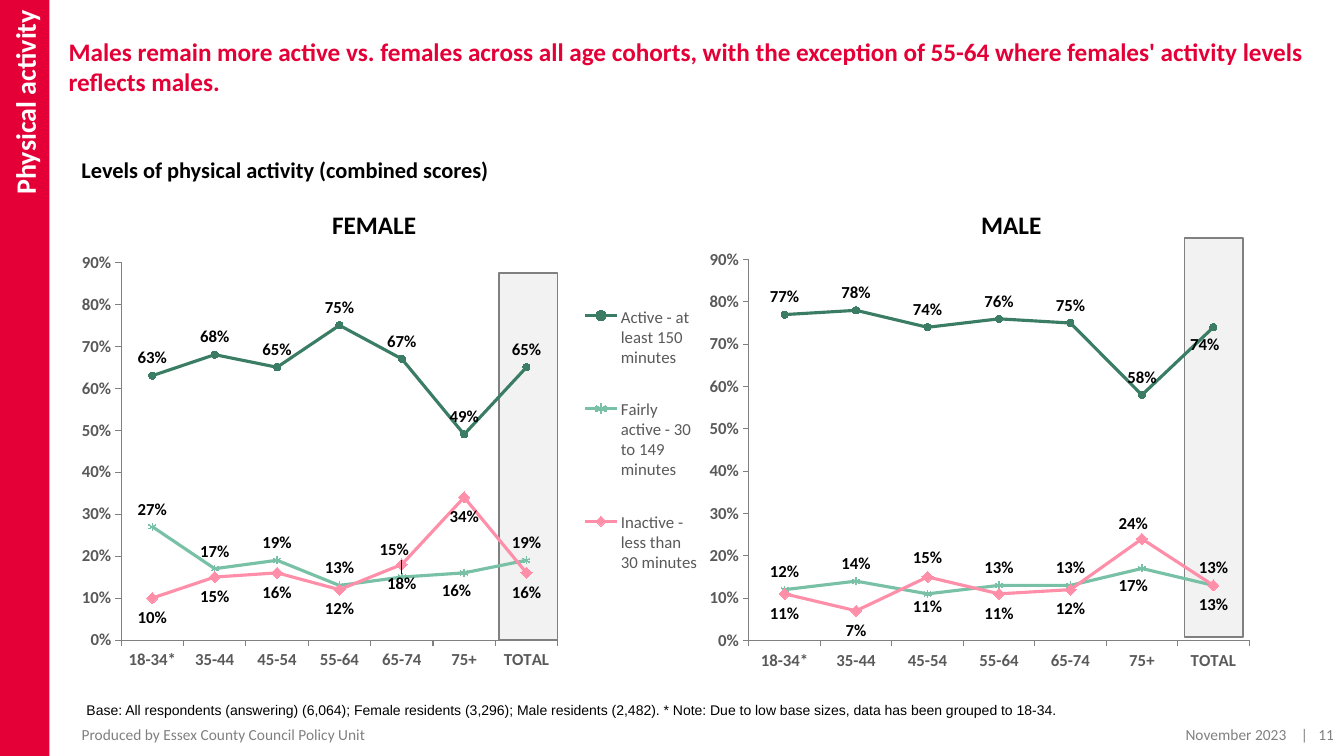
from lxml import etree
from pptx import Presentation
from pptx.chart.data import CategoryChartData
from pptx.dml.color import RGBColor
from pptx.enum.chart import (XL_CHART_TYPE, XL_LABEL_POSITION, XL_LEGEND_POSITION,
                             XL_MARKER_STYLE, XL_TICK_MARK)
from pptx.enum.shapes import MSO_SHAPE
from pptx.enum.text import MSO_ANCHOR, PP_ALIGN
from pptx.oxml import parse_xml
from pptx.util import Inches, Pt

ABOVE, BELOW = XL_LABEL_POSITION.ABOVE, XL_LABEL_POSITION.BELOW
CIRCLE, STAR, DIAMOND = XL_MARKER_STYLE.CIRCLE, XL_MARKER_STYLE.STAR, XL_MARKER_STYLE.DIAMOND
LINE_MARKERS = XL_CHART_TYPE.LINE_MARKERS
LEGEND_RIGHT = XL_LEGEND_POSITION.RIGHT
TICK_OUTSIDE, TICK_NONE = XL_TICK_MARK.OUTSIDE, XL_TICK_MARK.NONE
RECTANGLE = MSO_SHAPE.RECTANGLE
TOP, MIDDLE = MSO_ANCHOR.TOP, MSO_ANCHOR.MIDDLE
LEFT, CENTER, RIGHT = PP_ALIGN.LEFT, PP_ALIGN.CENTER, PP_ALIGN.RIGHT

RED = RGBColor(0xE4, 0x00, 0x37)
WHITE = RGBColor(0xFF, 0xFF, 0xFF)
BLACK = RGBColor(0x00, 0x00, 0x00)
DARK_GREY = RGBColor(0x59, 0x59, 0x59)
GREY = RGBColor(0x80, 0x80, 0x80)
PALE_GREY = RGBColor(0xF2, 0xF2, 0xF2)
DARK_GREEN = RGBColor(0x3A, 0x7D, 0x64)
LIGHT_GREEN = RGBColor(0x78, 0xC0, 0xA6)
PINK = RGBColor(0xFF, 0x8E, 0xA9)

CHART_NS = "http://schemas.openxmlformats.org/drawingml/2006/chart"
DRAWING_NS = "http://schemas.openxmlformats.org/drawingml/2006/main"
AGE_GROUPS = ["18-34*", "35-44", "45-54", "55-64", "65-74", "75+", "TOTAL"]
ACTIVITY_LEVELS = [
    ("Active - at least 150 minutes", DARK_GREEN, CIRCLE, 5, ABOVE),
    ("Fairly active - 30 to 149 minutes", LIGHT_GREEN, STAR, 5, ABOVE),
    ("Inactive - less than 30 minutes", PINK, DIAMOND, 8, BELOW),
]
PLOT_LAYOUT = {"x": 0.06, "y": 0.054, "w": 0.575, "h": 0.799}
LEGEND_LAYOUT = {"x": 0.67, "y": 0.08, "w": 0.15, "h": 0.7}

FEMALE_SHARES = [
    [0.63, 0.68, 0.65, 0.75, 0.67, 0.49, 0.65],
    [0.27, 0.17, 0.19, 0.13, 0.15, 0.16, 0.19],
    [0.10, 0.15, 0.16, 0.12, 0.18, 0.34, 0.16],
]
MALE_SHARES = [
    [0.77, 0.78, 0.74, 0.76, 0.75, 0.58, 0.74],
    [0.12, 0.14, 0.11, 0.13, 0.13, 0.17, 0.13],
    [0.11, 0.07, 0.15, 0.11, 0.12, 0.24, 0.13],
]
FEMALE_MOVED_LABELS = [(1, 4, ABOVE, -0.01, -0.02), (1, 5, BELOW, -0.01, 0)]
MALE_MOVED_LABELS = [(0, 6, BELOW, -0.01, 0), (1, 2, BELOW, 0, -0.01),
                     (1, 5, BELOW, -0.01, 0), (2, 2, ABOVE, 0, 0),
                     (2, 5, ABOVE, -0.01, 0.01)]


def write_text(shape, text, size=12, color=BLACK, bold=False, font="Calibri",
               align=LEFT, anchor=TOP, insets=(0.1, 0.05, 0.1, 0.05)):
    """Fill a shape with one formatted paragraph."""
    frame = shape.text_frame
    frame.word_wrap = True
    frame.vertical_anchor = anchor
    (frame.margin_left, frame.margin_top,
     frame.margin_right, frame.margin_bottom) = map(Inches, insets)
    paragraph = frame.paragraphs[0]
    paragraph.alignment = align
    run = paragraph.add_run()
    run.text = text
    style_font(run.font, size, color, bold, font)


def style_font(font, size, color, bold=False, name="Calibri"):
    """Set the typeface, size, colour and weight of a font."""
    font.name, font.size, font.bold = name, Pt(size), bold
    font.color.rgb = color


def add_text(slide, box, text, **text_format):
    """Add a text box at a box given in inches."""
    write_text(slide.shapes.add_textbox(*map(Inches, box)), text, **text_format)


def add_block(slide, box, fill, outline=None):
    """Add a flat rectangle, outlined when a colour is given."""
    block = slide.shapes.add_shape(RECTANGLE, *map(Inches, box))
    block.shadow.inherit = False
    block.fill.solid()
    block.fill.fore_color.rgb = fill
    if outline is None:
        block.line.fill.background()
    else:
        block.line.color.rgb = outline
        block.line.width = Pt(1)
    return block


def manual_layout(fractions, inner=False, edges=False):
    """Build a chart layout element from fractions of the chart."""
    layout = etree.Element(f"{{{CHART_NS}}}layout")
    manual = etree.SubElement(layout, f"{{{CHART_NS}}}manualLayout")
    settings = {"layoutTarget": "inner"} if inner else {}
    if edges:
        settings.update(xMode="edge", yMode="edge")
    settings.update(fractions)
    for name, value in settings.items():
        etree.SubElement(manual, f"{{{CHART_NS}}}{name}", val=str(value))
    return layout


def clear_fill():
    """Build chart shape properties with neither fill nor outline."""
    return parse_xml(f'<c:spPr xmlns:c="{CHART_NS}" xmlns:a="{DRAWING_NS}">'
                     '<a:noFill/><a:ln><a:noFill/></a:ln></c:spPr>')


def place_part(part, layout, index):
    """Replace the layout of a chart part, at the given child index."""
    for old_layout in part.xpath("c:layout"):
        part.remove(old_layout)
    part.insert(index, layout)


def style_axis(axis):
    """Give an axis grey lines, outside ticks and bold labels."""
    axis.has_major_gridlines = False
    axis.major_tick_mark, axis.minor_tick_mark = TICK_OUTSIDE, TICK_NONE
    axis.format.line.color.rgb = GREY
    axis.format.line.width = Pt(0.75)
    style_font(axis.tick_labels.font, 12, DARK_GREY, bold=True)


def style_series(series, color, marker, marker_size, label_position):
    """Format the line, markers and value labels of one activity level."""
    series.smooth = False
    series.format.line.color.rgb = color
    series.format.line.width = Pt(2.25)
    series.marker.style, series.marker.size = marker, marker_size
    series.marker.format.fill.solid()
    series.marker.format.fill.fore_color.rgb = color
    series.marker.format.line.color.rgb = color
    labels = series.data_labels
    labels.show_value = True
    labels.number_format, labels.number_format_is_linked = "0%", False
    labels.position = label_position
    style_font(labels.font, 12, BLACK, bold=True)


def move_label(series, point, position, dx, dy):
    """Shift the value label of one point away from its neighbours."""
    label = series.points[point].data_label
    style_font(label.font, 12, BLACK, bold=True)
    label.position = position
    index = series.data_labels._element.xpath(f"c:dLbl/c:idx[@val='{point}']")[0]
    index.addnext(manual_layout({"x": dx, "y": dy}))


def add_activity_chart(slide, box, total_box, shares, moved_labels, with_legend=False):
    """Draw the activity lines by age over a shaded band for the total."""
    add_block(slide, total_box, PALE_GREY, GREY)
    data = CategoryChartData(number_format="0%")
    data.categories = AGE_GROUPS
    for level, values in zip(ACTIVITY_LEVELS, shares):
        data.add_series(level[0], values)
    chart = slide.shapes.add_chart(LINE_MARKERS, *map(Inches, box), data).chart
    chart.has_title = False
    style_font(chart.font, 10, BLACK)
    style_axis(chart.category_axis)
    share_axis = chart.value_axis
    style_axis(share_axis)
    share_axis.minimum_scale, share_axis.maximum_scale, share_axis.major_unit = 0, 0.9, 0.1
    share_axis.tick_labels.number_format = "0%"
    share_axis.tick_labels.number_format_is_linked = False
    plot = chart.plots[0]
    plot.vary_by_categories = False
    for series, level in zip(plot.series, ACTIVITY_LEVELS):
        style_series(series, *level[1:])
    for level_index, *move in moved_labels:
        move_label(plot.series[level_index], *move)
    chart.has_legend = with_legend
    if with_legend:
        chart.legend.position = LEGEND_RIGHT
        chart.legend.include_in_layout = False
        style_font(chart.legend.font, 12, DARK_GREY)
        place_part(chart.legend._element, manual_layout(LEGEND_LAYOUT, edges=True), 1)
    plot_area = chart._chartSpace.xpath("c:chart/c:plotArea")[0]
    place_part(plot_area, manual_layout(PLOT_LAYOUT, inner=True, edges=True), 0)
    plot_area.append(clear_fill())
    chart._chartSpace.xpath("c:chart")[0].addnext(clear_fill())


def add_section_band(slide, box, section):
    """Add the red side band with its upward-reading section name."""
    band = add_block(slide, box, RED)
    write_text(band, section, size=20, color=WHITE, bold=True, align=RIGHT,
               anchor=MIDDLE, insets=(0.1, 0.1, 0.1, 0.05))
    band.text_frame._txBody.bodyPr.set("vert", "vert270")


def add_headline(slide, box, headline):
    """Place and format the slide title."""
    title = slide.shapes.title
    title.left, title.top, title.width, title.height = map(Inches, box)
    write_text(title, headline, size=18, color=RED, bold=True, insets=(0, 0, 0, 0))


def add_footer(slide, top, height):
    """Add the producer, date and page number along the bottom."""
    footer_format = {"size": 11, "color": GREY, "anchor": MIDDLE}
    add_text(slide, (0.62, top, 6.54, height), "Produced by Essex County Council Policy Unit",
             insets=(0.19, 0, 0.1, 0), **footer_format)
    add_text(slide, (10.51, top, 2.4, height), "November 2023", align=RIGHT,
             insets=(0.1, 0, 0.15, 0), **footer_format)
    add_text(slide, (12.48, top, 0.85, height), "|   11", align=RIGHT,
             insets=(0.1, 0, 0.1, 0), **footer_format)


def main():
    """Build and save the physical activity slide."""
    deck = Presentation()
    deck.slide_width, deck.slide_height = Inches(13.33), Inches(7.5)
    slide = deck.slides.add_slide(deck.slide_layouts[5])
    add_headline(slide, (0.68, 0.36, 12.47, 1.16),
                 "Males remain more active vs. females across all age cohorts, with the exception "
                 "of 55-64 where females' activity levels reflects males.")
    add_activity_chart(slide, (6.91, 2.32, 8.63, 4.73), (11.75, 2.36, 0.58, 3.96),
                       MALE_SHARES, MALE_MOVED_LABELS)
    add_activity_chart(slide, (0.75, 2.35, 7.53, 4.69), (4.95, 2.71, 0.58, 3.64),
                       FEMALE_SHARES, FEMALE_MOVED_LABELS, with_legend=True)
    add_section_band(slide, (0, 0, 0.49, 7.5), "Physical activity")
    add_text(slide, (0.71, 1.5, 7.11, 0.37), "Levels of physical activity (combined scores)",
             size=16, bold=True)
    for left, gender in ((2.52, "FEMALE"), (8.84, "MALE")):
        add_text(slide, (left, 2.03, 2.38, 0.4), gender, size=18, bold=True, align=CENTER)
    add_text(slide, (0.76, 6.91, 12.43, 0.27),
             "Base: All respondents (answering) (6,064); Female residents (3,296); Male residents "
             "(2,482). * Note: Due to low base sizes, data has been grouped to 18-34.",
             size=10, font="Arial")
    add_footer(slide, 7.21, 0.15)
    deck.save("out.pptx")


if __name__ == "__main__":
    main()
